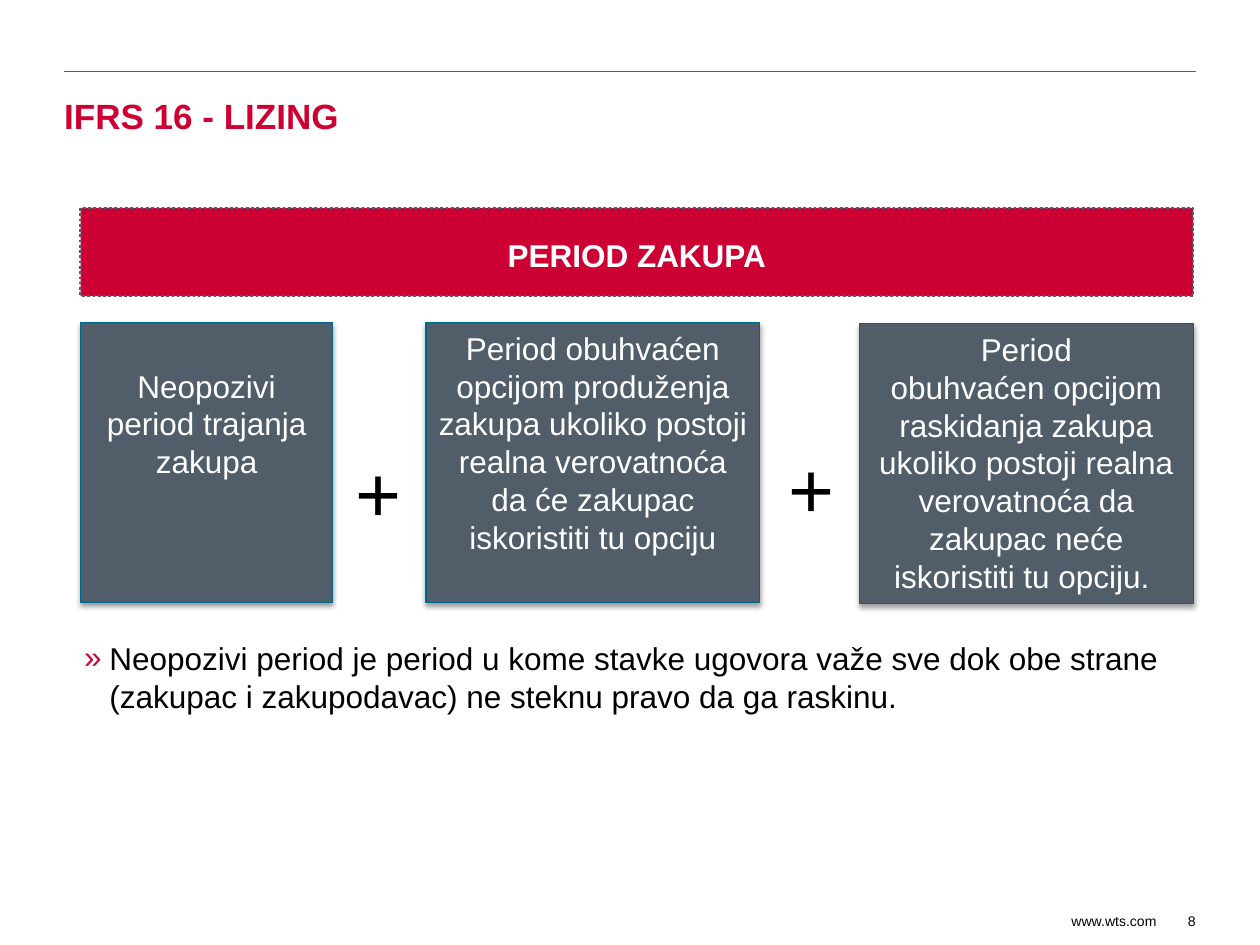
from lxml import etree
from pptx import Presentation
from pptx.dml.color import RGBColor
from pptx.enum.dml import MSO_LINE
from pptx.enum.shapes import MSO_CONNECTOR, MSO_SHAPE
from pptx.enum.text import MSO_ANCHOR, PP_ALIGN
from pptx.oxml.ns import qn
from pptx.util import Inches, Pt

RED = RGBColor(0xCC, 0x00, 0x33)
TITLE_RED = RGBColor(0xCE, 0x00, 0x33)
SLATE = RGBColor(0x51, 0x5D, 0x69)
TEAL = RGBColor(0x00, 0x67, 0x8B)
WHITE = RGBColor(0xFF, 0xFF, 0xFF)
BLACK = RGBColor(0x00, 0x00, 0x00)

LEFT, CENTER, RIGHT = PP_ALIGN.LEFT, PP_ALIGN.CENTER, PP_ALIGN.RIGHT
TOP, MIDDLE = MSO_ANCHOR.TOP, MSO_ANCHOR.MIDDLE
RECT, STRAIGHT, DOTTED = MSO_SHAPE.RECTANGLE, MSO_CONNECTOR.STRAIGHT, MSO_LINE.ROUND_DOT


def write(shape, lines, size, color, align=LEFT, anchor=TOP, bold=False,
          wrap=True, side=0.1, top=0.05, bottom=0.05):
    """Fill a shape with one paragraph per line; margins are in inches."""
    tf = shape.text_frame
    tf.word_wrap = wrap
    tf.vertical_anchor = anchor
    tf.margin_left = tf.margin_right = Inches(side)
    tf.margin_top, tf.margin_bottom = Inches(top), Inches(bottom)
    tf.text = "\n".join(lines)
    for p in tf.paragraphs:
        p.alignment = align
        p.font.name = "Arial"
        p.font.size = Pt(size)
        p.font.bold = bold
        p.font.color.rgb = color


def add_text(s, box, text, size, color, **style):
    tb = s.shapes.add_textbox(*map(Inches, box))
    write(tb, [text], size, color, **style)
    return tb


def add_rect(s, box, fill, line, width):
    rect = s.shapes.add_shape(RECT, *map(Inches, box))
    rect.fill.solid()
    rect.fill.fore_color.rgb = fill
    rect.line.color.rgb = line
    rect.line.width = Pt(width)
    rect.shadow.inherit = False
    return rect


def add_shadow(shape):
    effects = shape._element.spPr.find(qn("a:effectLst"))
    shadow = etree.SubElement(effects, qn("a:outerShdw"), blurRad=str(Pt(3.1)),
                              dist=str(Pt(1.6)), dir="5400000", rotWithShape="0")
    color = etree.SubElement(shadow, qn("a:srgbClr"), val="000000")
    etree.SubElement(color, qn("a:alpha"), val="38000")


def add_header(s, left, top, width):
    # Rule above the title
    rule = s.shapes.add_connector(STRAIGHT, Inches(left), Inches(top),
                                  Inches(left + width), Inches(top))
    rule.line.color.rgb = SLATE
    rule.line.width = Pt(0.75)
    etree.SubElement(rule._element.spPr, qn("a:effectLst"))
    # Title
    add_text(s, (left, top + 0.15, width, 0.67), "IFRS 16 - LIZING", 20,
             TITLE_RED, bold=True, side=0, top=0.03, bottom=0)


def add_banner(s, box):
    banner = add_rect(s, box, RED, SLATE, 1.5)
    banner.line.dash_style = DOTTED
    write(banner, ["PERIOD ZAKUPA"], 18, WHITE, align=CENTER, anchor=MIDDLE,
          bold=True, top=0.1)


def add_period_boxes(s, top, height):
    # left, offset from top, width, top margin, lines
    periods = [
        (0.64, 0, 2, 0.35, ["Neopozivi period trajanja zakupa"]),
        (3.38, 0, 2.65, 0.05,
         ["Period obuhvaćen opcijom produženja zakupa ukoliko postoji realna "
          "verovatnoća da će zakupac iskoristiti tu opciju"]),
        (6.82, 0.01, 2.65, 0.05,
         ["Period",
          "obuhvaćen opcijom raskidanja zakupa ukoliko postoji realna "
          "verovatnoća da zakupac neće iskoristiti tu opciju. "]),
    ]
    for left, offset, width, margin, lines in periods:
        rect = add_rect(s, (left, top + offset, width, height), SLATE, TEAL, 0.75)
        add_shadow(rect)
        write(rect, lines, 18, WHITE, align=CENTER, top=margin)
    # Plus signs between the boxes
    for left, offset in ((2.72, 0.85), (6.16, 0.82)):
        add_text(s, (left, top + offset, 0.92, 0.86), "+", 45, BLACK, top=0.11)


def add_bullet_note(s, box):
    tb = add_text(s, box,
                  "Neopozivi period je period u kome stavke ugovora važe sve dok obe "
                  "strane (zakupac i zakupodavac) ne steknu pravo da ga raskinu.",
                  18, BLACK, top=0.08)
    pPr = tb.text_frame.paragraphs[0]._p.get_or_add_pPr()
    pPr.set("marL", str(Inches(0.2)))
    pPr.set("indent", str(-Inches(0.2)))
    # Bullet elements go ahead of the default run properties
    color = etree.Element(qn("a:buClr"))
    etree.SubElement(color, qn("a:srgbClr"), val=str(RED))
    pPr.insert(0, color)
    pPr.insert(1, etree.Element(qn("a:buFont"), typeface="Arial"))
    pPr.insert(2, etree.Element(qn("a:buChar"), char="»"))


def add_footer(s, top):
    for left, width, text in ((8.49, 0.69, "www.wts.com"), (9.27, 0.22, "8")):
        add_text(s, (left, top, width, 0.14), text, 8, BLACK, align=RIGHT,
                 anchor=MIDDLE, wrap=False, side=0, top=0, bottom=0)


def main():
    prs = Presentation()
    prs.slide_width, prs.slide_height = Inches(10), Inches(7.5)
    s = prs.slides.add_slide(prs.slide_layouts[6])
    add_header(s, 0.51, 0.57, 8.98)
    add_banner(s, (0.64, 1.65, 8.83, 0.7))
    add_period_boxes(s, 2.56, 2.22)
    add_bullet_note(s, (0.57, 4.99, 8.79, 0.71))
    add_footer(s, 7.24)
    prs.save("out.pptx")


if __name__ == "__main__":
    main()
